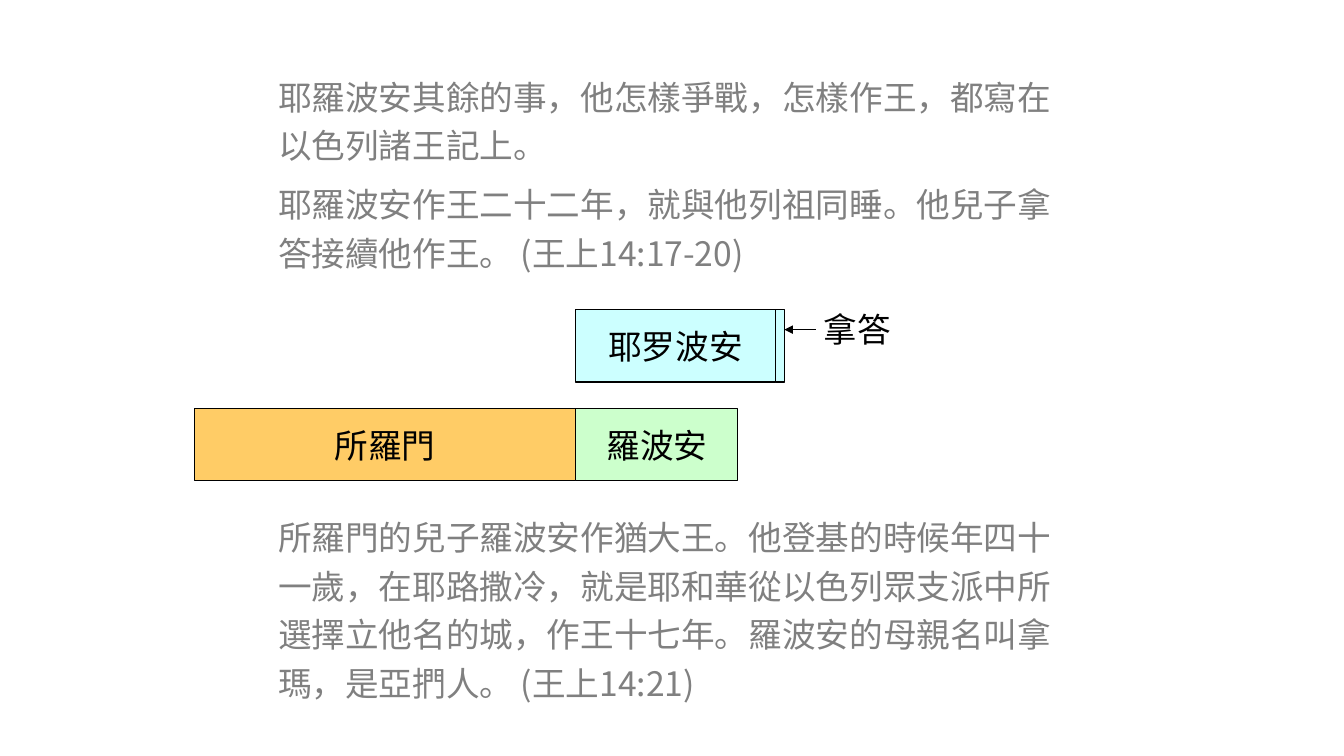
from lxml.etree import SubElement
from pptx import Presentation
from pptx.dml.color import RGBColor
from pptx.enum.shapes import MSO_CONNECTOR, MSO_SHAPE
from pptx.enum.text import MSO_ANCHOR, PP_ALIGN
from pptx.oxml.ns import qn
from pptx.util import Inches, Pt

FONT = "Noto Sans CJK SC"
BLACK, GRAY = "000000", "808080"
PASSAGES = [
    (0.63, 2.1, [
        "耶羅波安其餘的事，他怎樣爭戰，怎樣作王，都寫在以色列諸王記上。",
        "耶羅波安作王二十二年，就與他列祖同睡。他兒子拿答接續他作王。 (王上14:17-20)",
    ]),
    (5.0, 1.98, [
        "所羅門的兒子羅波安作猶大王。他登基的時候年四十一歲，在耶路撒冷，"
        "就是耶和華從以色列眾支派中所選擇立他名的城，作王十七年。"
        "羅波安的母親名叫拿瑪，是亞捫人。 (王上14:21)",
    ]),
]
REIGN_ROWS = [
    (1.93, 4.05, [("所羅門", 3.78, "FFCC66"), ("羅波安", 1.61, "CCFFCC")]),
    (5.71, 3.07, [("耶罗波安", 1.98, "CCFFFF"), ("", 0.09, "CCFFFF")]),
]
BAR_HEIGHT = 0.72
NADAB = "拿答"


def color(value):
    return RGBColor.from_string(value)


def style_runs(paragraph, text_color):
    for run in paragraph.runs:
        run.font.size = Pt(24)
        run.font.name = FONT
        run.font.color.rgb = color(text_color)
        SubElement(run.font._element, qn("a:ea")).set("typeface", FONT)


def write_label(shape, text):
    frame = shape.text_frame
    frame.text = text
    frame.word_wrap = False
    frame.vertical_anchor = MSO_ANCHOR.MIDDLE
    paragraph = frame.paragraphs[0]
    paragraph.alignment = PP_ALIGN.CENTER
    style_runs(paragraph, BLACK)


def add_passage(slide, top, height, lines):
    box = slide.shapes.add_textbox(Inches(2.66), Inches(top), Inches(8), Inches(height))
    frame = box.text_frame
    frame.word_wrap = True
    frame.text = "\n".join(lines)
    for paragraph in frame.paragraphs:
        paragraph.line_spacing = Pt(34.7)
        paragraph.space_after = Pt(7.2)
        style_runs(paragraph, GRAY)


def add_reigns(slide, left, top, reigns):
    for king, width, fill in reigns:
        bar = slide.shapes.add_shape(
            MSO_SHAPE.RECTANGLE, Inches(left), Inches(top), Inches(width), Inches(BAR_HEIGHT))
        bar.shadow.inherit = False
        bar.fill.solid()
        bar.fill.fore_color.rgb = color(fill)
        bar.line.color.rgb = color(BLACK)
        bar.line.width = Pt(0.75)
        if king:
            write_label(bar, king)
        left += width


def add_arrow(slide, start, end, y):
    arrow = slide.shapes.add_connector(
        MSO_CONNECTOR.STRAIGHT, Inches(start), Inches(y), Inches(end), Inches(y))
    arrow.line.color.rgb = color(BLACK)
    arrow.line.width = Pt(0.75)
    SubElement(arrow.line._get_or_add_ln(), qn("a:tailEnd")).set("type", "triangle")
    SubElement(arrow._element.spPr, qn("a:effectLst"))


def main():
    presentation = Presentation()
    presentation.slide_width = Inches(13.33)
    presentation.slide_height = Inches(7.5)
    slide = presentation.slides.add_slide(presentation.slide_layouts[6])
    for top, height, lines in PASSAGES:
        add_passage(slide, top, height, lines)
    for left, top, reigns in REIGN_ROWS:
        add_reigns(slide, left, top, reigns)
    label = slide.shapes.add_textbox(Inches(8.07), Inches(3.01), Inches(0.87), Inches(0.5))
    write_label(label, NADAB)
    add_arrow(slide, 8.09, 7.78, 3.27)
    presentation.save("out.pptx")


if __name__ == "__main__":
    main()
